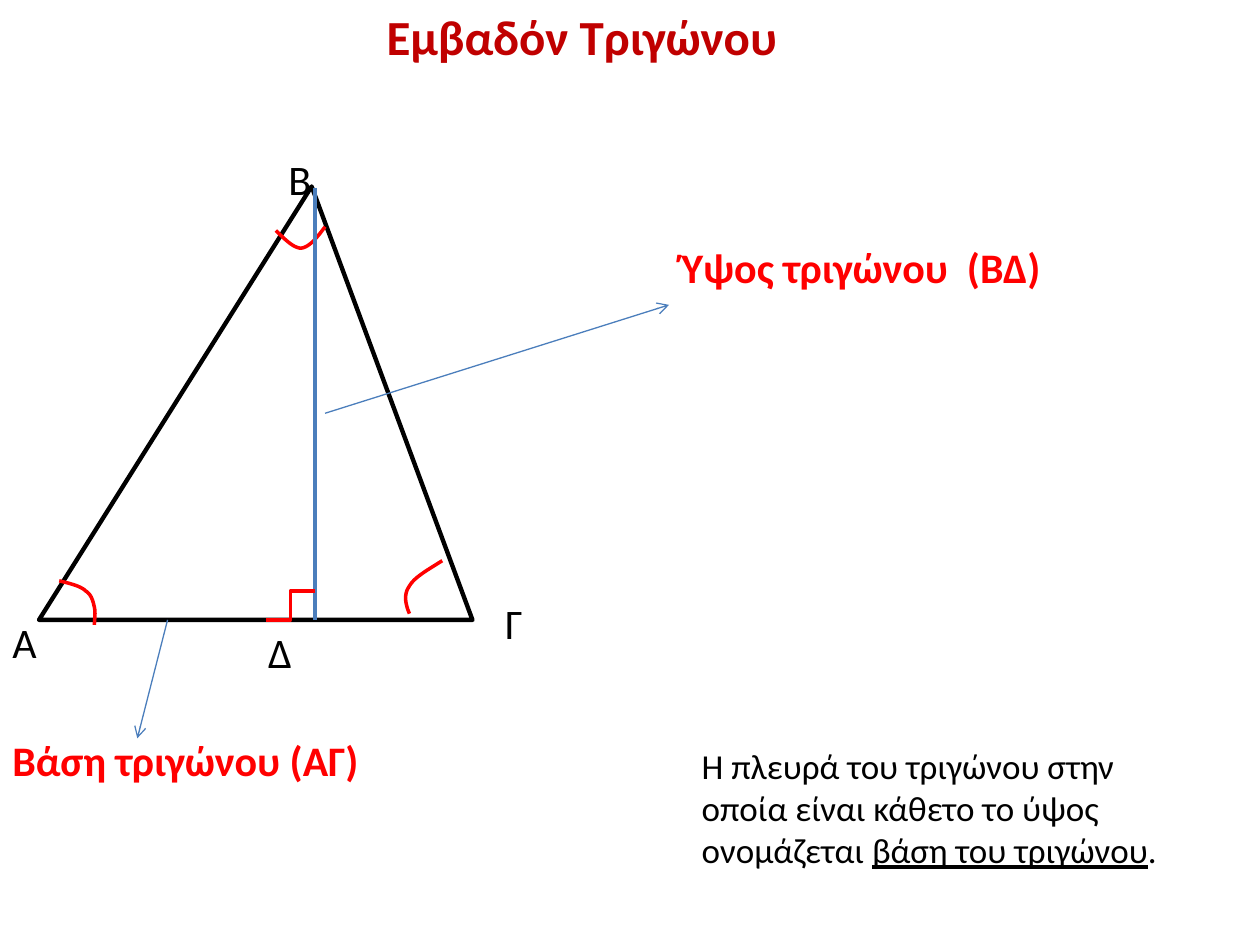
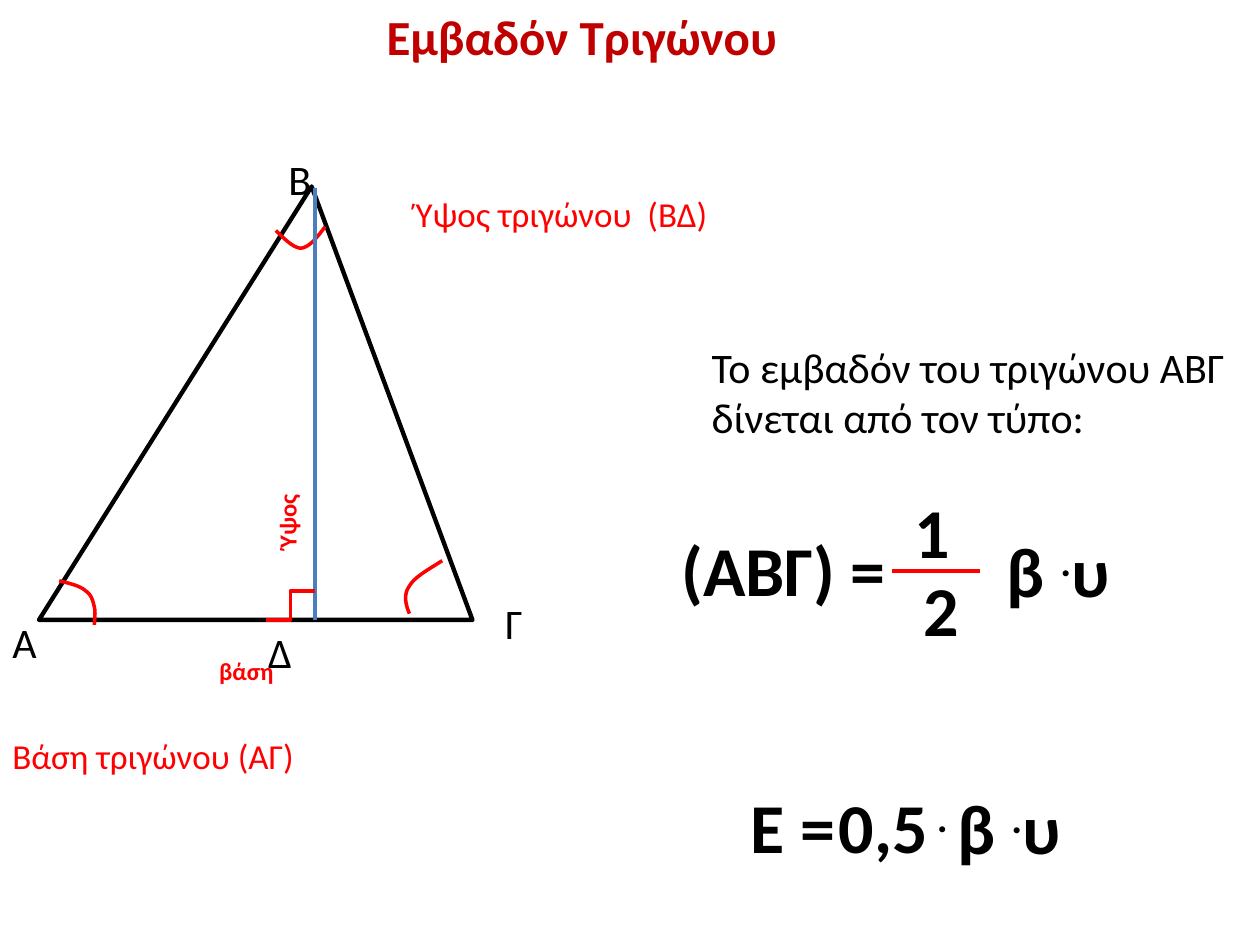
from pptx import Presentation
from pptx.dml.color import RGBColor
from pptx.enum.shapes import MSO_CONNECTOR, MSO_SHAPE
from pptx.enum.text import MSO_AUTO_SIZE
from pptx.oxml.ns import qn
from pptx.util import Inches, Pt
from lxml.etree import SubElement

# Shared look
FONT = "Calibri"
BLACK, RED, DARK_RED, BLUE = "000000", "FF0000", "C00000", "4B7EBC"
TITLE = "Εμβαδόν Τριγώνου"
HEIGHT_LABEL = "Ύψος τριγώνου  (ΒΔ)"
BASE_LABEL = "Βάση τριγώνου (ΑΓ)"
BETA_TIMES_HEIGHT = [("β ", {}), (".", {"raised": True}), ("υ", {})]

# Vertex name and the place of its label
VERTICES = [("Α", 0, 4.84), ("Β", 2.19, 1.17), ("Γ", 3.91, 4.69), ("Δ", 2.03, 4.92)]

# Angle arcs: a start point, then two controls and an end for each curve
ANGLE_ARCS = [
    [(2.19, 1.83), (2.26, 1.9), (2.33, 1.97), (2.39, 1.97),
     (2.46, 1.96), (2.52, 1.88), (2.58, 1.8)],
    [(0.47, 4.61), (0.55, 4.63), (0.64, 4.65), (0.68, 4.69), (0.73, 4.72),
     (0.74, 4.78), (0.75, 4.82), (0.76, 4.87), (0.75, 4.92), (0.75, 4.96)],
    [(3.25, 4.87), (3.22, 4.8), (3.2, 4.72), (3.25, 4.65),
     (3.29, 4.58), (3.4, 4.52), (3.51, 4.45)],
]
CURVE_STEPS = 12


def color(hex_text):
    return RGBColor.from_string(hex_text)


def set_line(shape, line_color, width):
    shape.line.color.rgb = color(line_color)
    shape.line.width = Pt(width)


def add_text(slide, text, left, top, width, height, size=24, font_color=BLACK,
             bold=False, wrap=True, rotation=0):
    """Add a text box; text is a string or a list of (text, format) runs."""
    box = slide.shapes.add_textbox(Inches(left), Inches(top), Inches(width), Inches(height))
    box.rotation = rotation
    frame = box.text_frame
    frame.word_wrap = wrap
    frame.auto_size = MSO_AUTO_SIZE.SHAPE_TO_FIT_TEXT
    paragraph = frame.paragraphs[0]
    runs = [(text, {})] if isinstance(text, str) else text
    for run_text, run_format in runs:
        run = paragraph.add_run()
        run.text = run_text
        run.font.name = FONT
        run.font.size = Pt(size)
        run.font.bold = bold
        run.font.color.rgb = color(font_color)
        if run_format.get("underline"):
            run.font.underline = True
        if run_format.get("raised"):
            run._r.get_or_add_rPr().set("baseline", "30000")


def add_line(slide, start, end, line_color=BLUE, width=2.0,
             kind=MSO_CONNECTOR.STRAIGHT, arrow=False):
    points = [Inches(value) for value in (*start, *end)]
    connector = slide.shapes.add_connector(kind, *points)
    set_line(connector, line_color, width)
    if arrow:
        SubElement(connector.line._get_or_add_ln(), qn("a:tailEnd"), type="arrow")
    SubElement(connector._element.spPr, qn("a:effectLst"))


def curve_points(points):
    """Follow the chained cubic curves in short steps."""
    for first in range(0, len(points) - 1, 3):
        p0, p1, p2, p3 = points[first:first + 4]
        for step in range(1, CURVE_STEPS + 1):
            t = step / CURVE_STEPS
            u = 1 - t
            yield tuple(
                Inches(u**3 * a + 3 * u * u * t * b + 3 * u * t * t * c + t**3 * d)
                for a, b, c, d in zip(p0, p1, p2, p3))


def add_arc(slide, points):
    start_x, start_y = points[0]
    builder = slide.shapes.build_freeform(Inches(start_x), Inches(start_y))
    builder.add_line_segments(curve_points(points), close=False)
    arc = builder.convert_to_shape()
    arc.fill.background()
    arc.shadow.inherit = False
    set_line(arc, RED, 2)


def add_triangle(slide):
    """Draw the triangle with its angles, vertices, height and right angle."""
    triangle = slide.shapes.add_shape(
        MSO_SHAPE.ISOSCELES_TRIANGLE, Inches(0.31), Inches(1.48), Inches(3.44), Inches(3.44))
    triangle.adjustments[0] = 0.629
    triangle.fill.background()
    triangle.shadow.inherit = False
    set_line(triangle, BLACK, 2.5)
    for points in ANGLE_ARCS:
        add_arc(slide, points)
    for name, left, top in VERTICES:
        add_text(slide, name, left, top, 0.55, 0.5)
    add_line(slide, (2.5, 1.49), (2.5, 4.92))
    add_line(slide, (2.5, 4.69), (2.11, 4.92), line_color=RED, kind=MSO_CONNECTOR.ELBOW)


def add_triangle_slide(presentation):
    slide = presentation.slides.add_slide(presentation.slide_layouts[6])
    add_text(slide, TITLE, 2.97, 0, 5, 0.57, size=28, font_color=DARK_RED, bold=True)
    add_triangle(slide)
    return slide


def add_definition_slide(presentation):
    slide = add_triangle_slide(presentation)
    # Height and base, each with an arrow to its name
    add_text(slide, HEIGHT_LABEL, 5.31, 1.87, 3.98, 0.5, font_color=RED, bold=True)
    add_line(slide, (2.58, 3.28), (5.31, 2.42), width=0.75, arrow=True)
    add_text(slide, BASE_LABEL, 0, 5.78, 3.98, 0.5, font_color=RED, bold=True)
    add_line(slide, (1.33, 4.92), (1.09, 5.86), width=0.75, arrow=True)
    # Definition of the base
    definition = [
        ("Η πλευρά του τριγώνου στην οποία είναι κάθετο το ύψος ονομάζεται ", {}),
        ("βάση του τριγώνου", {"underline": True}),
        (".", {}),
    ]
    add_text(slide, definition, 5.47, 5.86, 3.98, 1.11, size=20)


def add_formula_slide(presentation):
    slide = add_triangle_slide(presentation)
    # Names of the height and the base
    add_text(slide, HEIGHT_LABEL, 3.2, 1.48, 3.98, 0.44, size=20, font_color=RED)
    add_text(slide, BASE_LABEL, 0, 5.78, 3.98, 0.44, size=20, font_color=RED)
    add_text(slide, "Ύψος", 1.62, 3.62, 1.32, 0.34, size=14, font_color=RED,
             bold=True, rotation=270)
    add_text(slide, "βάση", 1.64, 5.16, 1.32, 0.34, size=14, font_color=RED, bold=True)
    # Area formula with a fraction, then with a decimal
    add_text(slide, "Το εμβαδόν του τριγώνου ΑΒΓ δίνεται από τον τύπο:", 5.55, 2.66, 4.38, 0.91)
    add_line(slide, (7.08, 4.53), (7.78, 4.53), line_color=RED, width=2.25)
    formula_parts = [
        ("1", 7.16, 3.83, 0.55, True),
        ("2", 7.23, 4.45, 0.49, False),
        ("(ΑΒΓ) =", 5.31, 4.13, 1.84, False),
        (BETA_TIMES_HEIGHT, 7.89, 4.14, 1.04, False),
        ([("0,5", {}), (" .", {"raised": True})], 6.56, 6.17, 1.28, True),
        ("Ε =", 5.86, 6.17, 0.88, False),
        (BETA_TIMES_HEIGHT, 7.5, 6.18, 1.04, False),
    ]
    for text, left, top, width, wrap in formula_parts:
        add_text(slide, text, left, top, width, 0.77, size=40, bold=True, wrap=wrap)


def main():
    presentation = Presentation()
    presentation.slide_width = Inches(10)
    presentation.slide_height = Inches(7.5)
    add_definition_slide(presentation)
    add_formula_slide(presentation)
    presentation.save("out.pptx")


if __name__ == "__main__":
    main()
